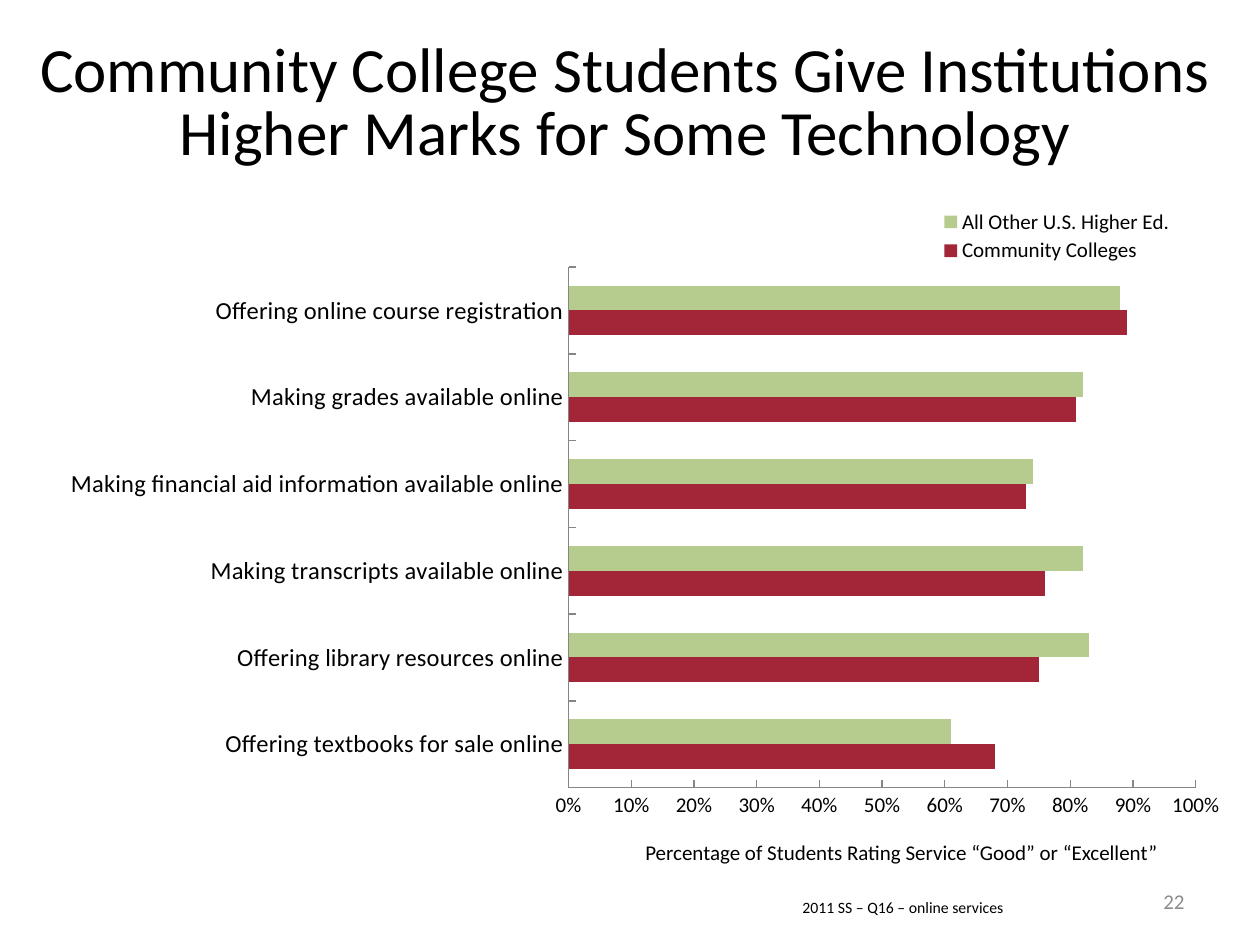
"""Build the slide on how students rate online services, with a clustered bar chart."""
from lxml import etree
from pptx import Presentation
from pptx.chart.data import CategoryChartData
from pptx.dml.color import RGBColor
from pptx.enum.chart import XL_CHART_TYPE, XL_LEGEND_POSITION, XL_TICK_MARK
from pptx.enum.text import MSO_ANCHOR, PP_ALIGN
from pptx.oxml.ns import qn
from pptx.util import Emu, Pt

BAR = XL_CHART_TYPE.BAR_CLUSTERED
RIGHT_SIDE = XL_LEGEND_POSITION.RIGHT
INSIDE = XL_TICK_MARK.INSIDE
TOP, MIDDLE = MSO_ANCHOR.TOP, MSO_ANCHOR.MIDDLE
LEFT, CENTER, RIGHT = PP_ALIGN.LEFT, PP_ALIGN.CENTER, PP_ALIGN.RIGHT
BLACK = RGBColor(0x00, 0x00, 0x00)
GRAY = RGBColor(0x8C, 0x8C, 0x8C)
AXIS = RGBColor(0x86, 0x86, 0x86)
RED = RGBColor(0xA3, 0x26, 0x38)
GREEN = RGBColor(0xB5, 0xCC, 0x8E)
FONT = "Calibri"
SCALE = 914400 / 126


def px(*values):
    return [Emu(round(v * SCALE)) for v in values]


def set_layout(parent, index, inner, box):
    for old in parent.findall(qn("c:layout")):
        parent.remove(old)
    layout = etree.Element(qn("c:layout"))
    manual = etree.SubElement(layout, qn("c:manualLayout"))
    values = {"xMode": "edge", "yMode": "edge", **dict(zip("xywh", box))}
    if inner:
        values = {"layoutTarget": "inner", **values}
    for tag, value in values.items():
        etree.SubElement(manual, qn(f"c:{tag}")).set("val", str(value))
    parent.insert(index, layout)


prs = Presentation()
prs.slide_width, prs.slide_height = px(1260, 945)
s = prs.slides.add_slide(prs.slide_layouts[6])

texts = [
    ("Community College Students Give Institutions Higher Marks for Some Technology",
     (10, 21, 1230, 169), MIDDLE, CENTER, Pt(36), BLACK),
    ("22", (903, 876, 294, 50), MIDDLE, RIGHT, Pt(12), GRAY),
    ("Percentage of Students Rating Service “Good” or “Excellent”",
     (633, 833, 595, 38), TOP, LEFT, Pt(12), BLACK),
    ("2011 SS – Q16 – online services", (790, 892, 384, 32), TOP, LEFT, Pt(9), BLACK),
]
for text, box, anchor, align, size, color in texts:
    tf = s.shapes.add_textbox(*px(*box)).text_frame
    tf.word_wrap = True
    tf.vertical_anchor = anchor
    p = tf.paragraphs[0]
    p.alignment = align
    if size == Pt(36):
        p.line_spacing = Pt(36)
    r = p.add_run()
    r.text = text
    for name, value in {"name": FONT, "size": size}.items():
        setattr(r.font, name, value)
    r.font.color.rgb = color

series = [
    ("Community Colleges", (0.68, 0.75, 0.76, 0.73, 0.81, 0.89), RED),
    ("All Other U.S. Higher Ed.", (0.61, 0.83, 0.82, 0.74, 0.82, 0.88), GREEN),
]
data = CategoryChartData(number_format="0%")
data.categories = [
    "Offering textbooks for sale online",
    "Offering library resources online",
    "Making transcripts available online",
    "Making financial aid information available online",
    "Making grades available online",
    "Offering online course registration",
]
for name, values, color in series:
    data.add_series(name, values)
chart = s.shapes.add_chart(BAR, *px(38, 185, 1206, 685), data).chart
chart.has_title = False
chart.has_legend = True
legend = chart.legend
legend.position = RIGHT_SIDE
legend.include_in_layout = False

plot = chart.plots[0]
for name, value in {"gap_width": 150, "overlap": 0, "vary_by_categories": False}.items():
    setattr(plot, name, value)
for bars, (name, values, color) in zip(plot.series, series):
    bars.format.fill.solid()
    bars.format.fill.fore_color.rgb = color
    bars.invert_if_negative = False

cat, val = chart.category_axis, chart.value_axis
for name, value in {"minimum_scale": 0, "maximum_scale": 1, "major_unit": 0.1}.items():
    setattr(val, name, value)
val.tick_labels.number_format = "0%"
val.tick_labels.number_format_is_linked = False
for axis in (cat, val):
    axis.has_major_gridlines = False
    axis.major_tick_mark = INSIDE
    axis.format.line.color.rgb = AXIS
    axis.format.line.width = Pt(0.75)

fonts = [(chart.font, 18), (cat.tick_labels.font, 14),
         (val.tick_labels.font, 12), (legend.font, 12)]
for font, size in fonts:
    for name, value in {"name": FONT, "size": Pt(size)}.items():
        setattr(font, name, value)
    font.color.rgb = BLACK

root = chart.element if hasattr(chart, "element") else chart._chartSpace
set_layout(root.find(".//" + qn("c:plotArea")), 0, True, (0.44, 0.12, 0.52, 0.76))
set_layout(root.find(".//" + qn("c:legend")), 1, False, (0.74, 0.03, 0.21, 0.09))

prs.save("out.pptx")
